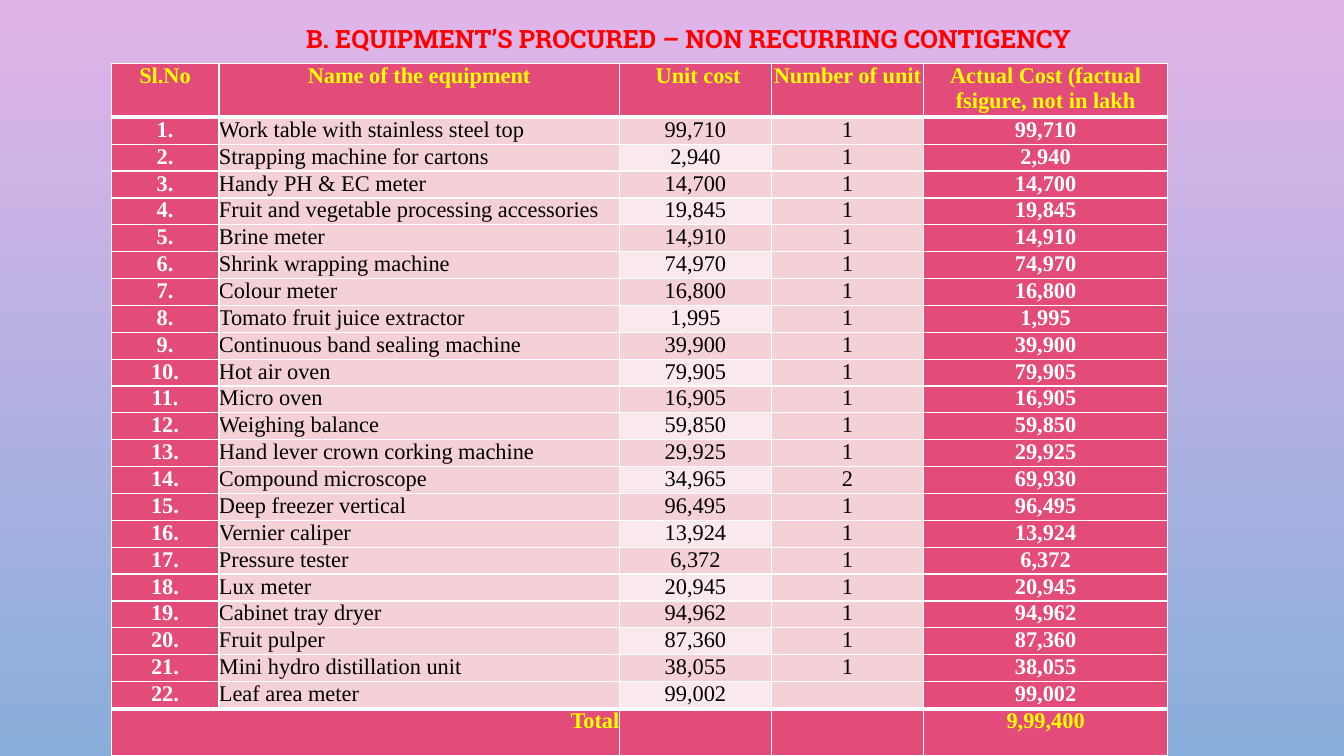
"""Build the slide that lists procured equipment and its cost."""
import lxml.etree
import pptx
import pptx.dml.color
import pptx.enum.text
import pptx.oxml.ns
import pptx.util

Pt = pptx.util.Pt
ALIGN = pptx.enum.text.PP_ALIGN
qn = pptx.oxml.ns.qn

EQUIPMENT = [
    ("Work table with stainless steel top", 99710, 1),
    ("Strapping machine for cartons", 2940, 1),
    ("Handy PH & EC meter", 14700, 1),
    ("Fruit and vegetable processing accessories", 19845, 1),
    ("Brine meter", 14910, 1),
    ("Shrink wrapping machine", 74970, 1),
    ("Colour meter", 16800, 1),
    ("Tomato fruit juice extractor", 1995, 1),
    ("Continuous band sealing machine", 39900, 1),
    ("Hot air oven", 79905, 1),
    ("Micro oven", 16905, 1),
    ("Weighing balance", 59850, 1),
    ("Hand lever crown corking machine", 29925, 1),
    ("Compound microscope", 34965, 2),
    ("Deep freezer vertical", 96495, 1),
    ("Vernier caliper", 13924, 1),
    ("Pressure tester", 6372, 1),
    ("Lux meter", 20945, 1),
    ("Cabinet tray dryer", 94962, 1),
    ("Fruit pulper", 87360, 1),
    ("Mini hydro distillation unit", 38055, 1),
    ("Leaf area meter", 99002, None),
]
HEADERS = ["Sl.No", "Name of the equipment", "Unit cost", "Number of unit",
           "Actual Cost (factual fsigure, not in lakh"]
COLUMNS = [77, 286, 108.7, 108.7, 174.3]


def rgb(value):
    return pptx.dml.color.RGBColor.from_string(value)


def write(tf, text, font="Times New Roman", size=16, color="000000", bold=False,
          align=ALIGN.CENTER, spacing=None):
    p = tf.paragraphs[0]
    p.alignment = align
    p.line_spacing = spacing
    if not text:
        lxml.etree.SubElement(p._p, qn("a:endParaRPr"), sz=str(size * 100))
        return
    r = p.add_run()
    r.text = text
    r.font.name = font
    r.font.size = Pt(size)
    r.font.bold = bold
    r.font.color.rgb = rgb(color)


class Deck:
    """Hold the slide style and draw each kind of element."""

    strong, light, pale = "E34B7A", "F4D0D7", "FAE9EC"
    white, yellow, red = "FFFFFF", "FFFF00", "FF0000"

    def __init__(self, prs):
        self.s = prs.slides.add_slide(prs.slide_layouts[5])

    def background(self, top, bottom):
        fill = self.s.background.fill
        fill.gradient()
        fill.gradient_angle = 270
        for stop, color, position in zip(fill.gradient_stops, (top, bottom), (0, 1)):
            stop.color.rgb = rgb(color)
            stop.position = position

    def title(self, text, x, y, w, h):
        sp = self.s.shapes.title
        sp.left, sp.top, sp.width, sp.height = Pt(x), Pt(y), Pt(w), Pt(h)
        sp.text_frame.vertical_anchor = pptx.enum.text.MSO_ANCHOR.MIDDLE
        write(sp.text_frame, text, font="Roboto Slab", size=18, color=self.red,
              bold=True, spacing=0.9)

    def table(self, x, y, columns, heights):
        frame = self.s.shapes.add_table(len(heights), len(columns), Pt(x), Pt(y),
                                        Pt(sum(columns)), Pt(sum(heights)))
        table = frame.table
        table.horz_banding = False
        for column, width in zip(table.columns, columns):
            column.width = Pt(width)
        for row, height in zip(table.rows, heights):
            row.height = Pt(height)
        return table

    def cell(self, cell, text, fill, top=1, bottom=1, **style):
        cell.margin_left = cell.margin_right = cell.margin_top = cell.margin_bottom = 0
        tc_pr = cell._tc.get_or_add_tcPr()
        for side, width in (("L", 1), ("R", 1), ("T", top), ("B", bottom)):
            ln = lxml.etree.SubElement(tc_pr, qn(f"a:ln{side}"), w=str(Pt(width)))
            solid = lxml.etree.SubElement(ln, qn("a:solidFill"))
            lxml.etree.SubElement(solid, qn("a:srgbClr"), val=self.white)
        cell.fill.solid()
        cell.fill.fore_color.rgb = rgb(fill)
        write(cell.text_frame, text, **style)


def equipment_table(deck):
    count = len(EQUIPMENT)
    table = deck.table(79.4, 45.6, COLUMNS, [38.2] + [19.2] * count + [33.1])
    accent = dict(color=deck.yellow, bold=True)
    strong = dict(color=deck.white, bold=True)

    for col, text in enumerate(HEADERS):
        deck.cell(table.cell(0, col), text, deck.strong, bottom=3, **accent)
    table.cell(0, 2).margin_left = Pt(4)

    for row, (name, cost, units) in enumerate(EQUIPMENT, 1):
        edges = dict(top=3 if row == 1 else 1, bottom=3 if row == count else 1)
        cells = [
            (f"{row}.", deck.strong, strong),
            (name, deck.light, dict(align=ALIGN.JUSTIFY)),
            (f"{cost:,}", deck.light if row % 2 else deck.pale, {}),
            (str(units or ""), deck.light, {}),
            (f"{cost * (units or 1):,}", deck.strong, strong),
        ]
        for col, (text, fill, style) in enumerate(cells):
            deck.cell(table.cell(row, col), text, fill, **edges, **style)

    last = count + 1
    for col, text in enumerate(["Total", "", "", "", "9,99,400"]):
        align = ALIGN.CENTER if col else ALIGN.RIGHT
        deck.cell(table.cell(last, col), text, deck.strong, top=3, align=align, **accent)
    table.cell(last, 0).merge(table.cell(last, 1))


def main():
    prs = pptx.Presentation()
    prs.slide_width, prs.slide_height = Pt(960), Pt(540)
    deck = Deck(prs)
    deck.background("E1B4E9", "89AEDB")
    deck.title("B. EQUIPMENT’S PROCURED – NON RECURRING CONTIGENCY", 72, -0.7, 840, 59)
    equipment_table(deck)
    prs.save("out.pptx")


if __name__ == "__main__":
    main()
